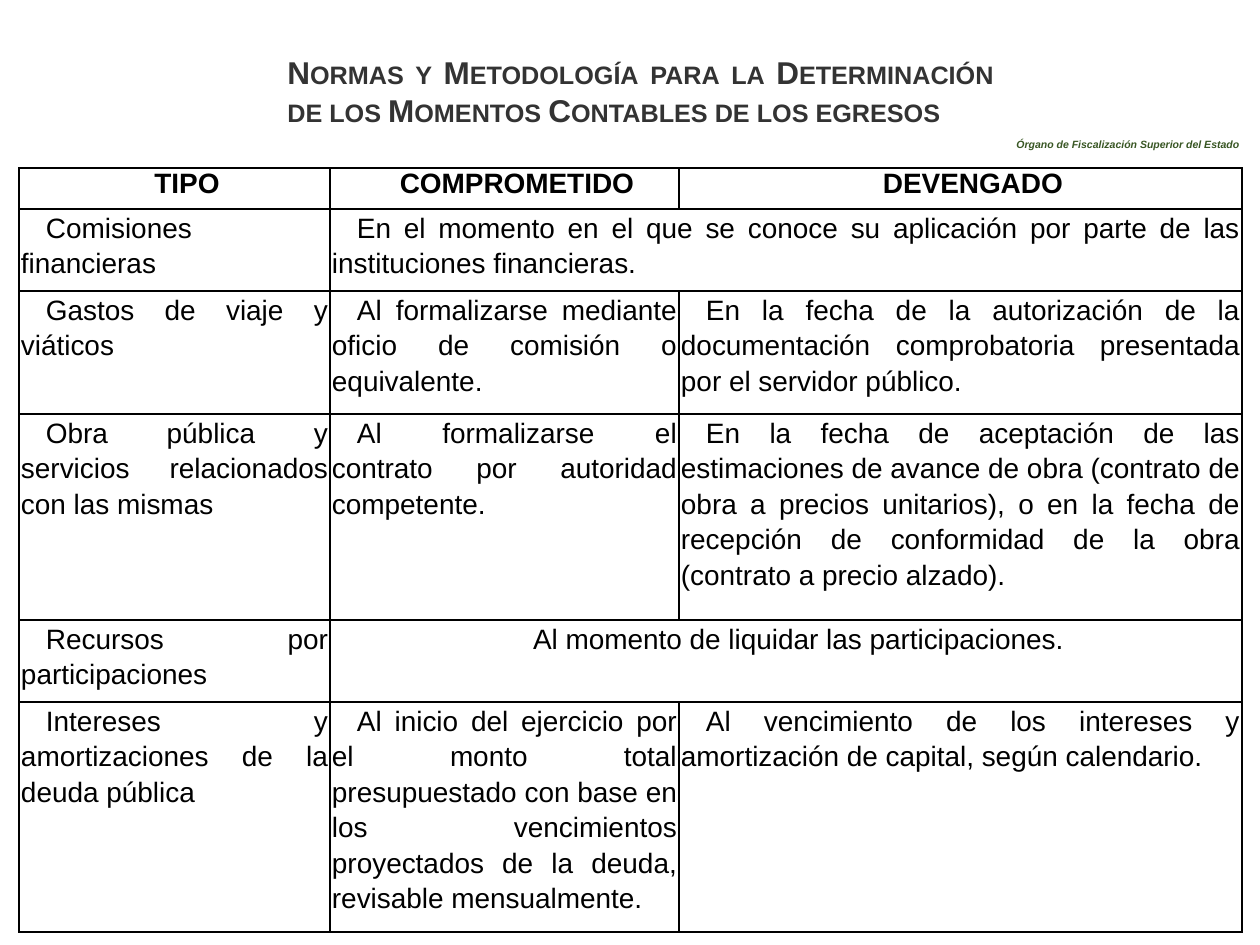
from lxml import etree
from pptx import Presentation
from pptx.dml.color import RGBColor
from pptx.enum.shapes import MSO_SHAPE
from pptx.enum.text import MSO_ANCHOR, PP_ALIGN
from pptx.oxml.ns import qn
from pptx.util import Emu, Pt

PX = 914400 // 126
FONT = "Arial"
BLACK = RGBColor(0x00, 0x00, 0x00)
WHITE = RGBColor(0xFF, 0xFF, 0xFF)
GRAY = RGBColor(0x33, 0x33, 0x33)
GREEN = RGBColor(0x38, 0x56, 0x23)
RECTANGLE = MSO_SHAPE.RECTANGLE
MIDDLE = MSO_ANCHOR.MIDDLE
LEFT, CENTER, JUSTIFY = PP_ALIGN.LEFT, PP_ALIGN.CENTER, PP_ALIGN.JUSTIFY

COLUMN_WIDTHS = [311, 349, 563]
ROW_HEIGHTS = [41, 82, 123, 206, 82, 230]
# A row with two texts has its second one spread over the last two columns.
ROWS = [
    ["TIPO", "COMPROMETIDO", "DEVENGADO"],
    ["Comisiones financieras",
     "En el momento en el que se conoce su aplicación por parte de las "
     "instituciones financieras."],
    ["Gastos de viaje y viáticos",
     "Al formalizarse mediante oficio de comisión o equivalente.",
     "En la fecha de la autorización de la documentación comprobatoria "
     "presentada por el servidor público."],
    ["Obra pública y servicios relacionados con las mismas",
     "Al formalizarse el contrato por autoridad competente.",
     "En la fecha de aceptación de las estimaciones de avance de obra "
     "(contrato de obra a precios unitarios), o en la fecha de recepción de "
     "conformidad de la obra (contrato a precio alzado)."],
    ["Recursos por participaciones",
     "Al momento de liquidar las participaciones."],
    ["Intereses y amortizaciones de la deuda pública",
     "Al inicio del ejercicio por el monto total presupuestado con base en "
     "los vencimientos proyectados de la deuda, revisable mensualmente.",
     "Al vencimiento de los intereses y amortización de capital, según "
     "calendario."],
]
CENTERED_CELLS = {(0, 0), (0, 1), (0, 2), (4, 1)}


def px(*lengths):
    return [Emu(length * PX) for length in lengths]


def write(frame, text, size, color, align, bold=False, italic=False):
    """Put one run into the first paragraph and return both."""
    frame.word_wrap = True
    paragraph = frame.paragraphs[0]
    paragraph.alignment = align
    run = paragraph.add_run()
    run.text = text
    font = run.font
    font.name, font.size, font.bold, font.italic = FONT, Pt(size), bold, italic
    font.color.rgb = color
    return paragraph, run


def add_title(slide):
    title = slide.shapes.add_textbox(*px(275, 47, 731, 89))
    _, run = write(
        title.text_frame,
        "Normas y Metodología para la Determinación de los Momentos Contables "
        "de los egresos", 18, GRAY, JUSTIFY, bold=True)
    run.font._element.set("cap", "small")


def add_agency_label(slide):
    label = slide.shapes.add_shape(RECTANGLE, *px(1004, 132, 256, 25))
    label.shadow.inherit = False
    label.fill.solid()
    label.fill.fore_color.rgb = WHITE
    label.line.fill.background()
    label.text_frame.vertical_anchor = MIDDLE
    write(label.text_frame, "Órgano de Fiscalización Superior del Estado",
          6, GREEN, LEFT, bold=True, italic=True)


def style_cell(cell):
    """Give the cell narrow margins, a black frame and no fill."""
    cell.margin_left, cell.margin_right = px(2, 2)
    cell.margin_top = cell.margin_bottom = 0
    properties = cell._tc.get_or_add_tcPr()
    for side in ("lnL", "lnR", "lnT", "lnB"):
        border = etree.SubElement(properties, qn(f"a:{side}"), w=str(Pt(1)))
        fill = etree.SubElement(border, qn("a:solidFill"))
        etree.SubElement(fill, qn("a:srgbClr"), val=str(BLACK))
    cell.fill.background()


def write_cell(cell, text, header, centered):
    paragraph, _ = write(cell.text_frame, text, 16, BLACK,
                         CENTER if centered else JUSTIFY, bold=header)
    paragraph._p.get_or_add_pPr().set("indent", str(25 * PX))
    paragraph.space_after = Pt(2)
    if not header:
        paragraph.line_spacing = 1.14


def add_moments_table(slide):
    table = slide.shapes.add_table(
        len(ROWS), len(COLUMN_WIDTHS),
        *px(19, 168, sum(COLUMN_WIDTHS), sum(ROW_HEIGHTS))).table
    table.first_row = table.horz_banding = False
    for column, width in zip(table.columns, COLUMN_WIDTHS):
        column.width = Emu(width * PX)
    for row, height in zip(table.rows, ROW_HEIGHTS):
        row.height = Emu(height * PX)
    for cell in table.iter_cells():
        style_cell(cell)
    for r, texts in enumerate(ROWS):
        if len(texts) == 2:
            table.cell(r, 1).merge(table.cell(r, 2))
        for c, text in enumerate(texts):
            write_cell(table.cell(r, c), text, r == 0, (r, c) in CENTERED_CELLS)


def main():
    presentation = Presentation()
    presentation.slide_width, presentation.slide_height = px(1260, 945)
    slide = presentation.slides.add_slide(presentation.slide_layouts[6])
    add_agency_label(slide)
    add_moments_table(slide)
    add_title(slide)
    presentation.save("out.pptx")


if __name__ == "__main__":
    main()
